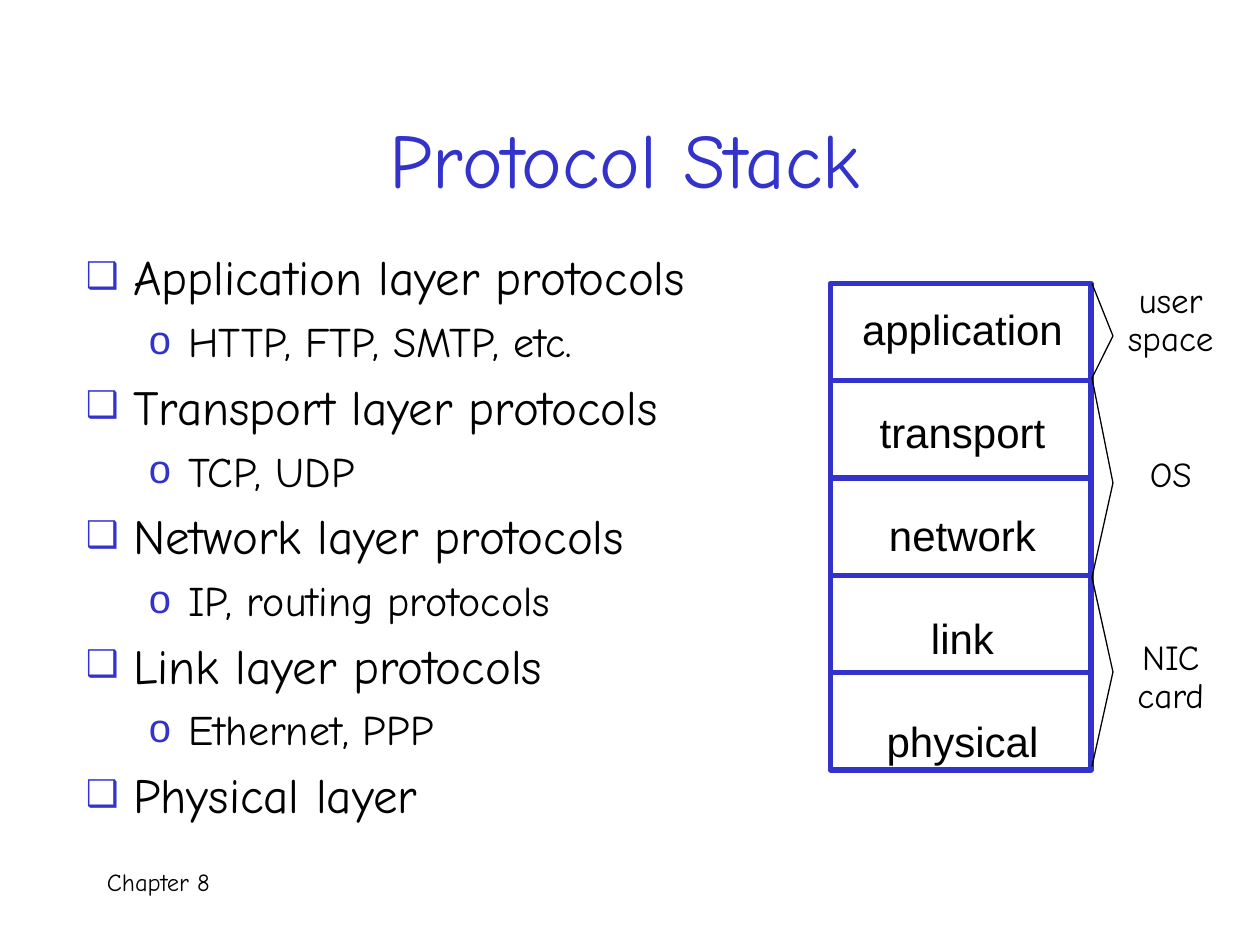
from itertools import pairwise

from lxml.etree import SubElement
from pptx import Presentation
from pptx.dml.color import RGBColor
from pptx.enum.shapes import MSO_CONNECTOR, MSO_SHAPE
from pptx.enum.text import MSO_ANCHOR, PP_ALIGN
from pptx.oxml.ns import qn
from pptx.util import Pt

BLUE = RGBColor(0x33, 0x33, 0xCC)
BLACK = RGBColor(0, 0, 0)
WHITE = RGBColor(0xFF, 0xFF, 0xFF)
HAND_FONT = "Comic Neue"
PLAIN_FONT = "Arial"

OUTLINE = [
    ("Application layer protocols", "HTTP, FTP, SMTP, etc."),
    ("Transport layer protocols", "TCP, UDP"),
    ("Network layer protocols", "IP, routing protocols"),
    ("Link layer protocols", "Ethernet, PPP"),
    ("Physical layer", None),
]
LAYERS = ["application", "transport", "network", "link", "physical"]
STACK_LEFT, STACK_TOP, STACK_WIDTH, STACK_HEIGHT = 474.5, 162, 149, 278
BRACE_LEFT, BRACE_TIP = 624, 636
# Brace heights alternate between an end and a tip.
BRACE_STOPS = [162, 192, 216, 276, 330, 384, 438]
SIDE_LABELS = [
    (636, 158.4, 66, 57.6, ["user", "space"]),
    (646.5, 257.8, 45, 32.4, ["OS"]),
    (641, 362.2, 56, 57.6, ["NIC", "card"]),
]


class SlideWriter:
    def __init__(self, page):
        self.page = page

    def text_frame(self, left, top, width, height, wrap=True):
        box = self.page.shapes.add_textbox(Pt(left), Pt(top), Pt(width), Pt(height))
        box.text_frame.word_wrap = wrap
        return box.text_frame

    def paragraph(self, frame, text, size, font=HAND_FONT, color=BLACK,
                  align=PP_ALIGN.LEFT, line_spacing=1.0, before=0, after=0):
        first = frame.paragraphs[0]
        para = frame.add_paragraph() if first.runs else first
        para.alignment = align
        para.line_spacing = line_spacing
        para.space_before, para.space_after = Pt(before), Pt(after)
        span = para.add_run()
        span.text = text
        span.font.size = Pt(size)
        span.font.name = font
        span.font.color.rgb = color
        return para

    def bullet(self, frame, text, level):
        size, before, margin, hanging, mark, percent = [
            (28, 6.5, 27, 27, "❑", 75),
            (24, 5.5, 58.5, 22.5, "o", 95),
        ][level]
        para = self.paragraph(frame, text, size, line_spacing=0.8,
                              before=before, after=6)
        para.level = level
        properties = para._p.get_or_add_pPr()
        properties.set("marL", str(Pt(margin)))
        properties.set("indent", str(-Pt(hanging)))
        color = SubElement(properties, qn("a:buClr"))
        SubElement(color, qn("a:srgbClr"), val=str(BLUE))
        SubElement(properties, qn("a:buSzPct"), val=str(percent * 1000))
        SubElement(properties, qn("a:buFont"), typeface=PLAIN_FONT)
        SubElement(properties, qn("a:buChar"), char=mark)

    def rectangle(self, left, top, width, height):
        box = self.page.shapes.add_shape(
            MSO_SHAPE.RECTANGLE, Pt(left), Pt(top), Pt(width), Pt(height))
        box.shadow.inherit = False
        box.fill.solid()
        box.fill.fore_color.rgb = WHITE
        box.line.color.rgb = BLUE
        box.line.width = Pt(3)

    def line(self, start, end, color, weight):
        connector = self.page.shapes.add_connector(
            MSO_CONNECTOR.STRAIGHT, *(Pt(value) for value in (*start, *end)))
        connector.line.color.rgb = color
        connector.line.width = Pt(weight)
        SubElement(connector._element.spPr, qn("a:effectLst"))


def main():
    deck = Presentation()
    deck.slide_width, deck.slide_height = Pt(720), Pt(540)
    writer = SlideWriter(deck.slides.add_slide(deck.slide_layouts[6]))

    writer.paragraph(writer.text_frame(54, 492, 618, 36), "Chapter 8", 14)

    title = writer.text_frame(18, 42, 678, 96)
    title.vertical_anchor = MSO_ANCHOR.MIDDLE
    writer.paragraph(title, "Protocol Stack", 44, color=BLUE, align=PP_ALIGN.CENTER)

    body = writer.text_frame(42, 144, 396, 330)
    for layer, examples in OUTLINE:
        writer.bullet(body, layer, 0)
        if examples:
            writer.bullet(body, examples, 1)

    writer.rectangle(STACK_LEFT, STACK_TOP, STACK_WIDTH, STACK_HEIGHT)
    names = writer.text_frame(485, 170, 130, 266, wrap=False)
    for index, layer in enumerate(LAYERS):
        writer.paragraph(names, layer, 24, PLAIN_FONT, align=PP_ALIGN.CENTER,
                         before=30 if index else 0)
    for index in range(1, len(LAYERS)):
        y = STACK_TOP + index * STACK_HEIGHT / len(LAYERS)
        writer.line((STACK_LEFT, y), (STACK_LEFT + STACK_WIDTH, y), BLUE, 3)

    corners = [(BRACE_TIP if index % 2 else BRACE_LEFT, y)
               for index, y in enumerate(BRACE_STOPS)]
    for start, end in pairwise(corners):
        writer.line(start, end, BLACK, 0.75)

    for left, top, width, height, words in SIDE_LABELS:
        label = writer.text_frame(left, top, width, height, wrap=False)
        for word in words:
            writer.paragraph(label, word, 20, align=PP_ALIGN.CENTER, line_spacing=0.9)

    deck.save("out.pptx")


if __name__ == "__main__":
    main()
